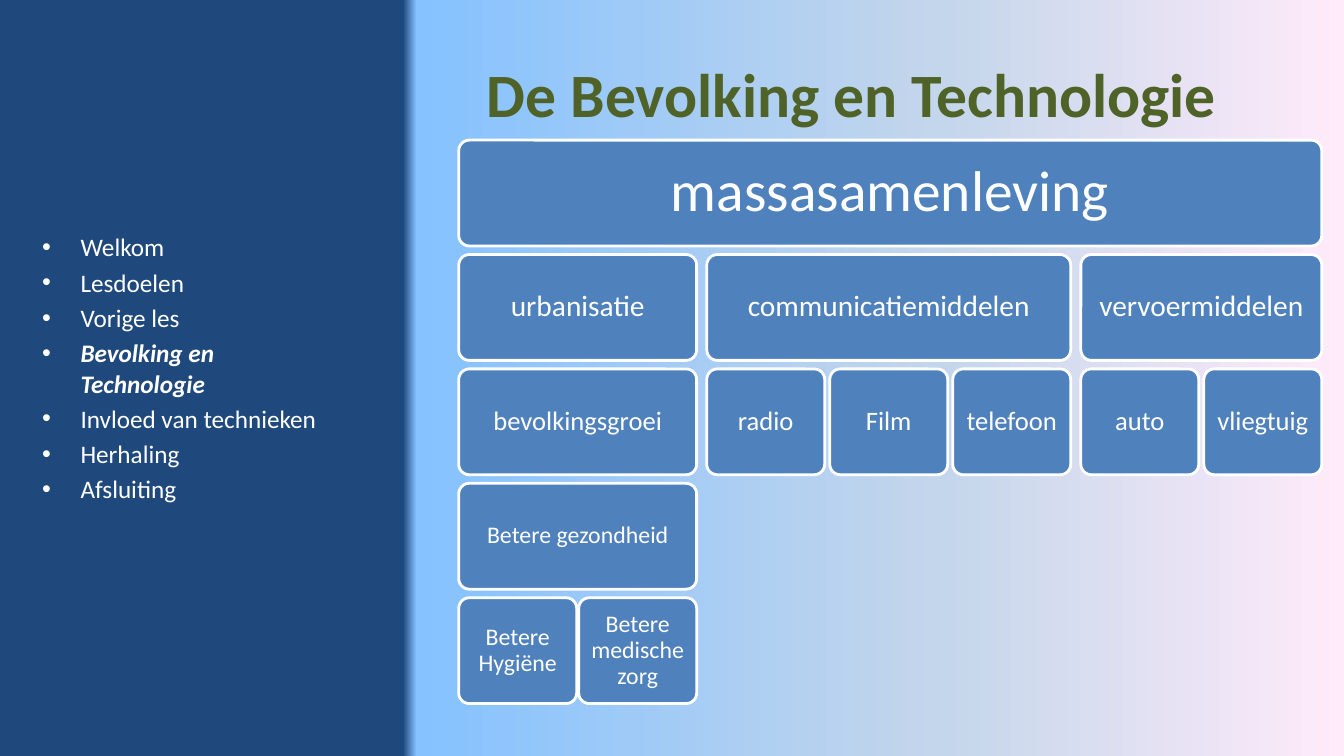
import pptx
import pptx.util
import pptx.dml.color
import pptx.enum.shapes
import pptx.enum.text
import pptx.oxml
import pptx.oxml.ns
from lxml import etree

Inches, Pt = pptx.util.Inches, pptx.util.Pt
RGB = pptx.dml.color.RGBColor.from_string
ALIGN = pptx.enum.text.PP_ALIGN
MIDDLE = pptx.enum.text.MSO_ANCHOR.MIDDLE
QN = pptx.oxml.ns.qn

COLORS = {"white": "FFFFFF", "title": "4F6228", "block": "4F81BD"}
BACKGROUND = [(30, "1F497D"), (31, "85C2FF"), (70, "C4D6EB"), (100, "FFEBFA")]
FONT = "Calibri"

TITLE = "De Bevolking en Technologie"
AGENDA = ["Welkom", "Lesdoelen", "Vorige les", "Bevolking en Technologie",
          "Invloed van technieken", "Herhaling", "Afsluiting"]
CURRENT = "Bevolking en Technologie"

# Each block is (label, blocks below it)
TREE = ("massasamenleving", [
    ("urbanisatie", [
        ("bevolkingsgroei", [
            ("Betere gezondheid", [
                ("Betere Hygiëne", []),
                ("Betere medische zorg", [])])])]),
    ("communicatiemiddelen", [("radio", []), ("Film", []), ("telefoon", [])]),
    ("vervoermiddelen", [("auto", []), ("vliegtuig", [])])])

# Per level: font size, text inset, gap between the blocks below
LEVELS = [(41, 0.17, 0.1), (21, 0.09, 0.05), (19, 0.08, 0.02),
          (17, 0.07, 0.02), (17, 0.07, 0)]
TREE_LEFT, TREE_TOP = 4.55, 1.39
LEAF_W, BLOCK_H, ROW_STEP = 1.17, 1.05, 1.135


def set_attrs(obj, values):
    for name, value in values.items():
        setattr(obj, name, value)


def write(p, text, size, color="white", **style):
    r = p.add_run()
    r.text = text
    set_attrs(r.font, {"name": FONT, "size": Pt(size), **style})
    r.font.color.rgb = RGB(COLORS[color])


def paint_background(slide):
    fill = slide.background.fill
    fill.gradient()
    fill.gradient_angle = 0
    stops = slide.background._cSld.find(".//" + QN("a:gsLst"))
    for stop in list(stops):
        stops.remove(stop)
    for pos, color in BACKGROUND:
        stop = etree.SubElement(stops, QN("a:gs"), pos=str(pos * 1000))
        etree.SubElement(stop, QN("a:srgbClr"), val=color)


def add_text_box(slide, left, top, width, height):
    box = slide.shapes.add_textbox(Inches(left), Inches(top), Inches(width), Inches(height))
    box.text_frame.word_wrap = True
    return box.text_frame


def add_title(slide):
    tf = add_text_box(slide, 4.23, 0.3, 8.44, 1.25)
    tf.vertical_anchor = MIDDLE
    p = tf.paragraphs[0]
    p.alignment = ALIGN.CENTER
    write(p, TITLE, 44, "title", bold=True)


def add_agenda(slide):
    tf = add_text_box(slide, 0.32, 2.25, 3.15, 4.95)
    for i, item in enumerate(AGENDA):
        p = tf.add_paragraph() if i else tf.paragraphs[0]
        p.space_before = Pt(3.6)
        current = item == CURRENT
        write(p, item, 18, bold=current, italic=current)
        pPr = p._p.get_or_add_pPr()
        pPr.set("marL", str(Inches(0.38)))
        pPr.set("indent", str(-Inches(0.38)))
        etree.SubElement(pPr, QN("a:buFont"), typeface="Arial")
        etree.SubElement(pPr, QN("a:buChar"), char="•")


def tree_width(node, level=0):
    """Width of a block: that of the blocks below it with their gaps."""
    below = node[1]
    if not below:
        return LEAF_W
    return sum(tree_width(n, level + 1) for n in below) + LEVELS[level][2] * (len(below) - 1)


def add_tree(slide, node, left, level=0):
    """Draw a block and, one row lower, the blocks below it."""
    label, below = node
    size, inset, gap = LEVELS[level]
    sp = slide.shapes.add_shape(
        pptx.enum.shapes.MSO_SHAPE.ROUNDED_RECTANGLE,
        Inches(left), Inches(TREE_TOP + level * ROW_STEP),
        Inches(tree_width(node, level)), Inches(BLOCK_H))
    sp.adjustments[0] = 0.1
    sp.shadow.inherit = False
    sp.fill.solid()
    sp.fill.fore_color.rgb = RGB(COLORS["block"])
    sp.line.color.rgb = RGB(COLORS["white"])
    sp.line.width = Pt(2)
    margins = {"margin_" + side: Inches(inset) for side in ("left", "top", "right", "bottom")}
    set_attrs(sp.text_frame, {"word_wrap": True, "vertical_anchor": MIDDLE, **margins})
    p = sp.text_frame.paragraphs[0]
    set_attrs(p, {"alignment": ALIGN.CENTER, "line_spacing": 0.9})
    write(p, label, size)
    for child in below:
        add_tree(slide, child, left, level + 1)
        left += tree_width(child, level + 1) + gap


def main():
    prs = pptx.Presentation()
    prs.slide_width, prs.slide_height = Inches(13.33), Inches(7.5)
    slide = prs.slides.add_slide(prs.slide_layouts[6])
    paint_background(slide)
    add_agenda(slide)
    add_title(slide)
    add_tree(slide, TREE, TREE_LEFT)
    prs.save("out.pptx")


if __name__ == "__main__":
    main()
